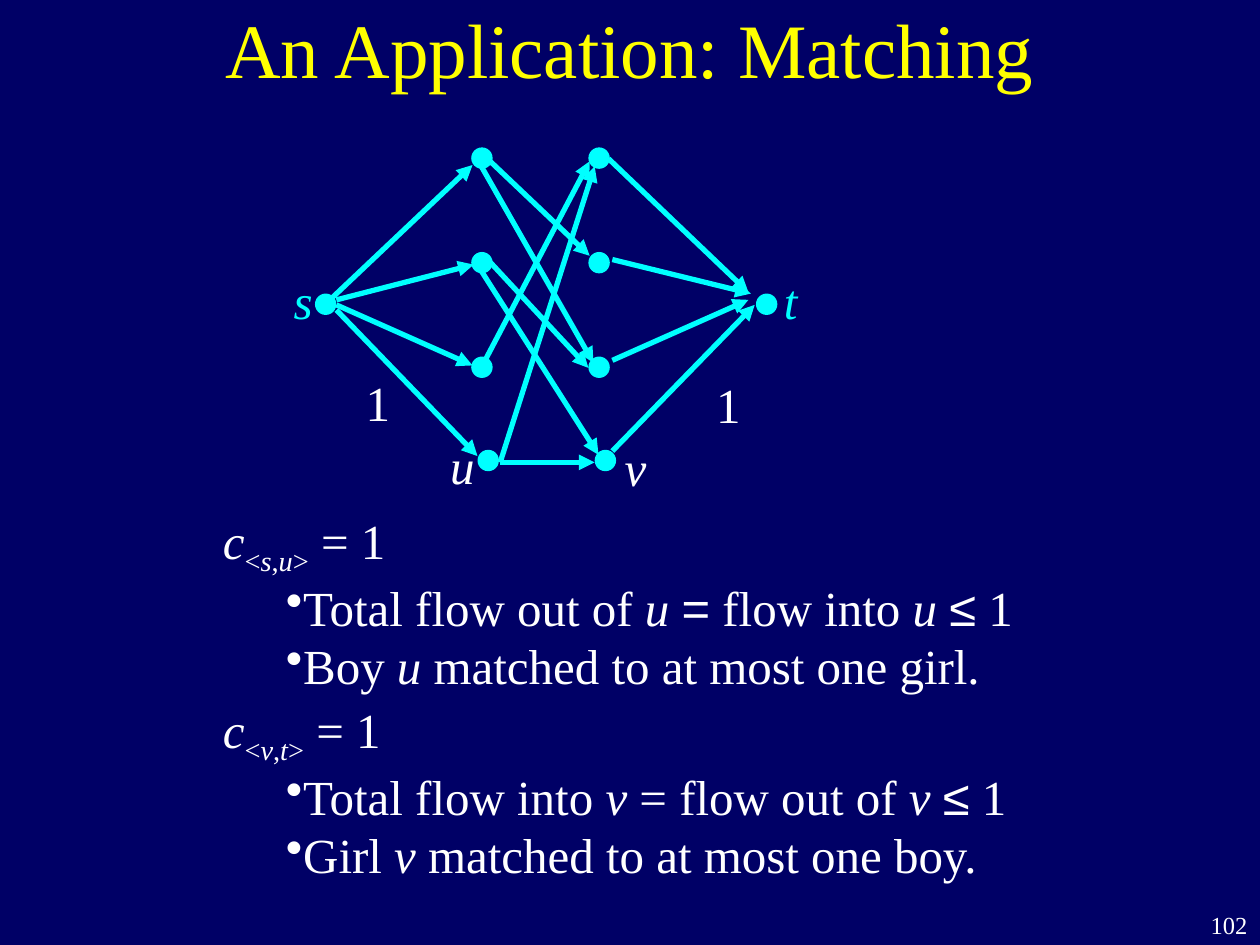
"""Build a slide on bipartite matching as a flow network."""
from lxml.etree import SubElement
from pptx import Presentation
from pptx.dml.color import RGBColor
from pptx.enum.shapes import MSO_CONNECTOR as CONNECTOR, MSO_SHAPE as SHAPE
from pptx.enum.text import MSO_ANCHOR as ANCHOR, MSO_AUTO_SIZE as AUTO_SIZE, PP_ALIGN as ALIGN
from pptx.oxml.ns import qn
from pptx.util import Inches, Pt

NAVY = RGBColor(0x00, 0x00, 0x66)
CYAN = RGBColor(0x00, 0xFF, 0xFF)
YELLOW = RGBColor(0xFF, 0xFF, 0x00)
WHITE = RGBColor(0xFF, 0xFF, 0xFF)
SERIF = "Times New Roman"
SANS = "Arial"
DOT = 0.17

prs = Presentation()
prs.slide_width, prs.slide_height = Inches(10), Inches(7.5)
slide = prs.slides.add_slide(prs.slide_layouts[6])
slide.background.fill.solid()
slide.background.fill.fore_color.rgb = NAVY


def add_text(paragraphs, at, size=28, color=WHITE, align=ALIGN.CENTER,
             anchor=ANCHOR.TOP, wrap=False, bullets=False):
    """Add paragraphs of (text, style) runs; style is '', 'i', 'sub', 'sub i' or 'sans'."""
    frame = slide.shapes.add_textbox(*map(Inches, at)).text_frame
    frame.word_wrap = wrap
    frame.vertical_anchor = anchor
    frame.auto_size = AUTO_SIZE.NONE if wrap else AUTO_SIZE.SHAPE_TO_FIT_TEXT
    for index, runs in enumerate(paragraphs):
        paragraph = frame.paragraphs[0] if index == 0 else frame.add_paragraph()
        paragraph.alignment = align
        if bullets and index > 0:
            paragraph.level = 1
            props = paragraph._p.get_or_add_pPr()
            props.set("marL", str(Inches(0.5)))
            props.set("indent", "0")
            SubElement(props, qn("a:buChar")).set("char", "•")
        for text, style in runs:
            run = paragraph.add_run()
            run.text = text
            run.font.size = Pt(size)
            run.font.color.rgb = color
            run.font.name = SANS if style == "sans" else SERIF
            run.font.italic = "i" in style.split()
            if "sub" in style:
                run._r.get_or_add_rPr().set("baseline", "-25000")


add_text([[("102", "")]], (9.5, 7.17, 0.5, 0.33), size=14, align=ALIGN.RIGHT, wrap=True)
add_text([[("An Application: Matching", "")]], (0.75, -0.25, 8.5, 1.25),
         size=44, color=YELLOW, anchor=ANCHOR.MIDDLE, wrap=True)

match_edges = [
    (3.82, 1.32, 4.71, 2.88), (3.88, 2.07, 4.67, 2.92), (3.85, 2.86, 4.68, 1.28),
    (3.97, 3.67, 4.72, 3.67), (3.89, 1.28, 4.68, 2.03), (3.82, 2.15, 4.75, 3.61),
    (3.97, 3.67, 4.72, 1.32),
]
source_edges = [
    (2.67, 2.46, 3.79, 3.62), (2.67, 2.42, 3.75, 2.9),
    (2.67, 2.38, 3.76, 2.1), (2.64, 2.36, 3.75, 1.31),
]
sink_edges = [
    (4.86, 3.58, 5.99, 2.42), (4.86, 2.86, 5.94, 2.38),
    (4.86, 2.06, 5.96, 2.33), (4.83, 1.26, 5.94, 2.32),
]
for edge in match_edges + source_edges + sink_edges:
    arrow = slide.shapes.add_connector(CONNECTOR.STRAIGHT, *map(Inches, edge))
    arrow.line.color.rgb = CYAN
    arrow.line.width = Pt(3)
    SubElement(arrow.line._get_or_add_ln(), qn("a:tailEnd")).set("type", "triangle")
    SubElement(arrow._element.spPr, qn("a:effectLst"))

boys = [(3.74, 1.17), (3.74, 2), (3.74, 2.83), (3.79, 3.57)]
girls = [(x + 0.93, y) for x, y in boys]
terminals = [(2.5, 2.33), (6, 2.33)]
for x, y in boys + girls + terminals:
    node = slide.shapes.add_shape(SHAPE.OVAL, *map(Inches, (x, y, DOT, DOT)))
    node.shadow.inherit = False
    node.fill.solid()
    node.fill.fore_color.rgb = CYAN
    node.line.fill.background()

for label, style, color, at in [
    ("s", "i", CYAN, (2.23, 2.1, 0.35, 0.57)),
    ("t", "i", CYAN, (6.12, 2.1, 0.31, 0.57)),
    ("1", "", WHITE, (2.8, 2.91, 0.4, 0.57)),
    ("1", "", WHITE, (5.58, 2.92, 0.4, 0.57)),
    ("u", "i", WHITE, (3.47, 3.41, 0.4, 0.57)),
    ("v", "i", WHITE, (4.86, 3.42, 0.37, 0.57)),
]:
    add_text([[(label, style)]], at, color=color)

boy_rules = [
    [("Total flow out of ", ""), ("u ", "i"), ("=", "sans"), (" flow into ", ""),
     ("u ", "i"), ("≤", "sans"), (" 1", "")],
    [("Boy ", ""), ("u", "i"), (" matched to at most one girl.", "")],
]
girl_rules = [
    [("Total flow into ", ""), ("v ", "i"), ("= flow out of ", ""),
     ("v ", "i"), ("≤", "sans"), (" 1", "")],
    [("Girl ", ""), ("v ", "i"), ("matched to at most one boy.", "")],
]
for tail, head, rules, top, width in [
    ("s", "u", boy_rules, 4, 6.49),
    ("v", "t", girl_rules, 5.5, 6.45),
]:
    capacity = [("c", "i"), ("<", "sub"), (tail, "sub i"), (",", "sub"),
                (head, "sub i"), (">", "sub"), (" = 1", "")]
    add_text([capacity] + rules, (1.67, top, width, 1.5), align=ALIGN.LEFT, bullets=True)

prs.save("out.pptx")
